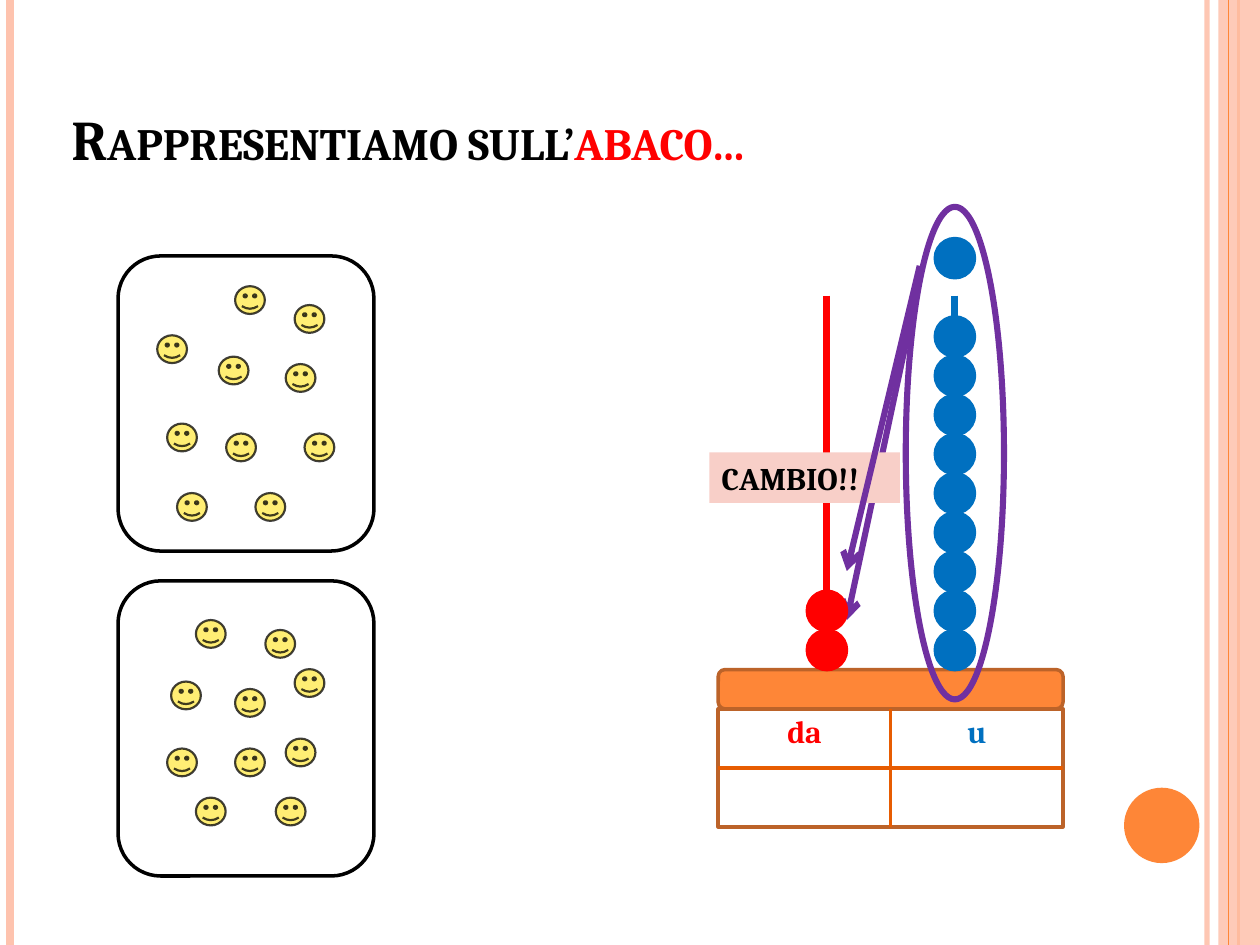
from lxml import etree
from pptx import Presentation
from pptx.dml.color import RGBColor
from pptx.enum.shapes import MSO_CONNECTOR, MSO_SHAPE
from pptx.enum.text import MSO_ANCHOR, PP_ALIGN
from pptx.oxml.ns import qn
from pptx.util import Cm, Pt

RECT, ROUND = MSO_SHAPE.RECTANGLE, MSO_SHAPE.ROUNDED_RECTANGLE
OVAL, SMILEY = MSO_SHAPE.OVAL, MSO_SHAPE.SMILEY_FACE
STRAIGHT = MSO_CONNECTOR.STRAIGHT
CENTER, LEFT = PP_ALIGN.CENTER, PP_ALIGN.LEFT
BOTTOM, TOP = MSO_ANCHOR.BOTTOM, MSO_ANCHOR.TOP

FONT = "Cambria"
BLACK, WHITE, RED, BLUE = "000000", "FFFFFF", "FF0000", "0070C0"
ORANGE, PEACH, PURPLE, BROWN = "FE8637", "FEC3AE", "7030A0", "BC6329"

FACE_W, FACE_H = 0.6, 0.56
BOX_W, BOX_H = 5.16, 5.95
FACES_TOP = [(2.36, 0.61), (3.56, 0.99), (0.79, 1.6), (2.03, 2.03), (3.38, 2.18),
             (0.99, 3.38), (2.18, 3.58), (3.76, 3.58), (1.19, 4.78), (2.77, 4.78)]
FACES_BOTTOM = [(1.57, 0.79), (2.97, 0.99), (3.56, 1.78), (1.07, 2.03), (2.36, 2.18),
                (0.99, 3.38), (2.36, 3.38), (3.38, 3.18), (1.57, 4.37), (3.18, 4.37)]


def rgb(color):
    return RGBColor.from_string(color)


def set_alpha(fill, percent):
    color = fill._xPr.find(qn("a:solidFill"))[0]
    etree.SubElement(color, qn("a:alpha")).set("val", str(percent * 1000))


def add_shape(s, kind, x, y, w, h, fill=None, line=None, width=2, fill_alpha=None, line_alpha=None):
    sp = s.shapes.add_shape(kind, Cm(x), Cm(y), Cm(w), Cm(h))
    sp.shadow.inherit = False
    if fill:
        sp.fill.solid()
        sp.fill.fore_color.rgb = rgb(fill)
        if fill_alpha:
            set_alpha(sp.fill, fill_alpha)
    else:
        sp.fill.background()
    if line:
        sp.line.color.rgb = rgb(line)
        sp.line.width = Pt(width)
        if line_alpha:
            set_alpha(sp.line.fill, line_alpha)
    else:
        sp.line.fill.background()
    return sp


def add_line(s, x1, y1, x2, y2, color, width, arrow=False, alpha=None):
    c = s.shapes.add_connector(STRAIGHT, Cm(x1), Cm(y1), Cm(x2), Cm(y2))
    c.line.color.rgb = rgb(color)
    c.line.width = Pt(width)
    if alpha:
        set_alpha(c.line.fill, alpha)
    if arrow:
        etree.SubElement(c.line._get_or_add_ln(), qn("a:tailEnd")).set("type", "arrow")
    etree.SubElement(c._element.spPr, qn("a:effectLst"))


def style(p, size, color, align):
    p.alignment = align
    p.font.name = FONT
    p.font.size = Pt(size)
    p.font.bold = True
    p.font.color.rgb = rgb(color)


def draw_frame(s, width, height):
    """Vertical stripes at both edges and the disc at the lower right."""
    add_line(s, width - 1.07, 0, width - 1.07, height, PEACH, 3, alpha=93)
    add_line(s, 0.2, 0, 0.2, height, PEACH, 4.5)
    add_line(s, width - 0.43, 0, width - 0.43, height, ORANGE, 1.5)
    add_shape(s, RECT, width - 0.84, 0, 0.84, height, PEACH, fill_alpha=87)
    add_line(s, width - 0.63, 0, width - 0.63, height, ORANGE, 0.75)
    add_shape(s, OVAL, width - 2.74, height - 3.17, 1.52, 1.52, ORANGE)


def draw_title(s, x, y, w, h):
    tf = s.shapes.add_textbox(Cm(x), Cm(y), Cm(w), Cm(h)).text_frame
    tf.word_wrap = True
    tf.vertical_anchor = BOTTOM
    p = tf.paragraphs[0]
    style(p, 32, BLACK, LEFT)
    for text, color in (("Rappresentiamo sull’", BLACK), ("abaco…", RED)):
        r = p.add_run()
        r.text = text
        r.font.color.rgb = rgb(color)
        r.font._element.set("cap", "small")


def draw_face_box(s, x, y, faces):
    for dx, dy in faces:
        add_shape(s, SMILEY, x + dx, y + dy, FACE_W, FACE_H, "FFEE74", BLACK, 1.25, line_alpha=74)
    add_shape(s, ROUND, x, y, BOX_W, BOX_H, line=BLACK)


def draw_place_table(s, x, y, w, h):
    """Tens and units table with its outline and grid lines."""
    table = s.shapes.add_table(2, 2, Cm(x), Cm(y), Cm(w), Cm(h)).table
    for row in table.rows:
        for cell in row.cells:
            cell.fill.solid()
            cell.fill.fore_color.rgb = rgb(WHITE)
    for cell, text, color in zip(table.rows[0].cells, ("da", "u"), (RED, BLUE)):
        cell.text = text
        style(cell.text_frame.paragraphs[0], 18, color, CENTER)
    add_shape(s, RECT, x, y, w, h, line=BROWN)
    add_line(s, x + w / 2, y, x + w / 2, y + h, "E75C01", 2)
    add_line(s, x, y + h / 2, x + w, y + h / 2, "E75C01", 2)


def draw_label(s, x, y, w, h):
    sp = add_shape(s, RECT, x, y, w, h, "F8CFC8")
    tf = sp.text_frame
    tf.word_wrap = False
    tf.vertical_anchor = TOP
    tf.text = "CAMBIO!!"
    style(tf.paragraphs[0], 18, BLACK, LEFT)


def draw_abacus(s, x, y, w, h):
    """Rods on a base above the table; ten unit beads are traded for a ten."""
    bead, table_h = 0.79, 2.38
    table_y = y + h - table_h
    base_y = table_y - bead
    tens_x, units_x = x + 2.19, x + 4.77

    def draw_beads(rod_x, slots, color):
        for slot in slots:
            add_shape(s, OVAL, rod_x - bead / 2, base_y - bead * (slot + 1), bead, bead, color, color)

    for rod_x, color in ((tens_x, RED), (units_x, BLUE)):
        add_line(s, rod_x, y + 1.79, rod_x, base_y, color, 4)
    add_shape(s, ROUND, x, base_y, w, bead, ORANGE, BROWN)
    draw_place_table(s, x, table_y, w, table_h)
    draw_beads(units_x, [*range(9), 10], BLUE)

    add_line(s, x + 4.06, y + 1.44, x + 2.59, y + 8.33, PURPLE, 3.5, arrow=True)
    add_shape(s, OVAL, units_x - 0.99, y, 1.98, 9.93, line=PURPLE, width=3.5)
    draw_beads(tens_x, range(2), RED)
    draw_label(s, x - 0.18, y + 4.95, 3.84, 1.02)
    add_line(s, x + 4.06, y + 1.19, x + 2.59, y + 7.34, PURPLE, 3.5, arrow=True)


def main():
    width, height = 25.4, 19.05
    prs = Presentation()
    prs.slide_width, prs.slide_height = Cm(width), Cm(height)
    s = prs.slides.add_slide(prs.slide_layouts[6])
    draw_frame(s, width, height)
    draw_title(s, 1.19, 1.4, 20.75, 2.18)
    draw_face_box(s, 2.38, 5.16, FACES_TOP)
    draw_face_box(s, 2.38, 11.71, FACES_BOTTOM)
    draw_abacus(s, 14.48, 4.17, 6.95, 12.5)
    prs.save("out.pptx")


if __name__ == "__main__":
    main()
